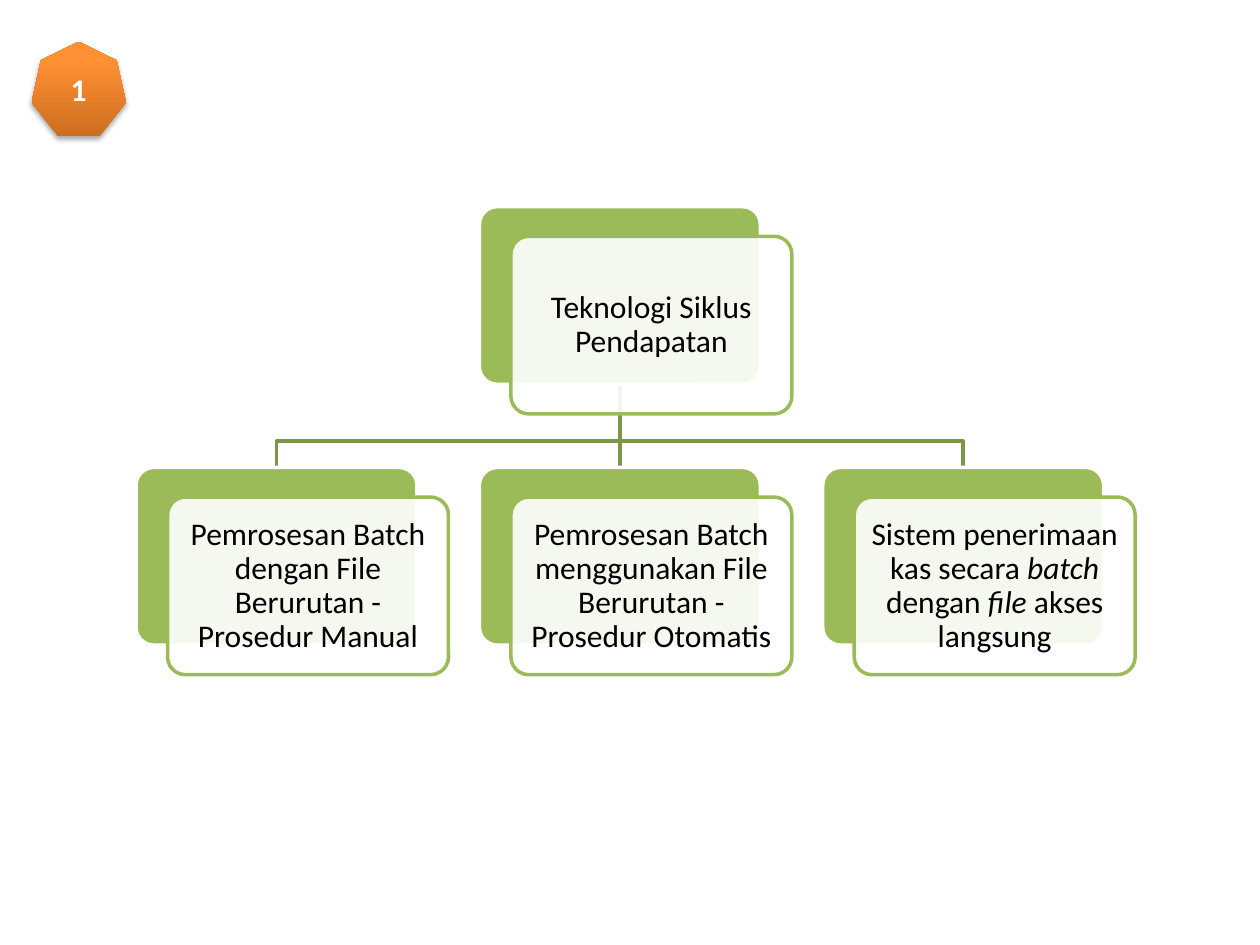
from dataclasses import dataclass
from lxml import etree
from copy import deepcopy
from pptx import Presentation, util as u
from pptx.dml.color import RGBColor
from pptx.enum import shapes, text
from pptx.oxml.ns import qn

# Content: each label is a list of (words, italic) runs
NUM = [("1", False)]
ROOT = [("Teknologi Siklus Pendapatan", False)]
KIDS = [
    [("Pemrosesan Batch dengan File Berurutan - Prosedur Manual", False)],
    [("Pemrosesan Batch menggunakan File Berurutan - Prosedur Otomatis", False)],
    [("Sistem penerimaan kas secara ", False), ("batch ", True),
     ("dengan ", False), ("file ", True), ("akses langsung", False)],
]


@dataclass(frozen=True)
class Theme:
    font: str = "Calibri"
    size: int = 18
    line: int = 2
    green: str = "9BBB59"
    dark: str = "7C9647"
    white: str = "FFFFFF"
    black: str = "000000"
    glow: tuple = ((0, "CC6E20"), (0.8, "FF9034"), (1, "FF9136"))


T = Theme()

# Grid, in inches
WIDE, HIGH = 10, 7.5
BOX_W, BOX_H = 2.23, 1.41
LEFT, STEP = 1.08, (6.53 - 1.08) / (len(KIDS) - 1)
TOP, ROW = 1.64, 2.07
OFF_X, OFF_Y = 0.25, 0.235
BEND = 0.21
PAD = 0.07

deck = Presentation()
deck.slide_width, deck.slide_height = u.Inches(WIDE), u.Inches(HIGH)
slide = deck.slides.add_slide(deck.slide_layouts[6])


def rgb(code):
    return RGBColor.from_string(code)


def write(shape, runs, color=T.black, bold=False, pad=PAD, lead=0.9):
    frame = shape.text_frame
    frame.word_wrap = True
    frame.vertical_anchor = text.MSO_ANCHOR.MIDDLE
    frame.margin_left = frame.margin_right = u.Inches(pad)
    frame.margin_top = frame.margin_bottom = u.Inches(pad)
    para = frame.paragraphs[0]
    para.alignment, para.line_spacing = text.PP_ALIGN.CENTER, lead
    for words, slant in runs:
        run = para.add_run()
        run.text = words
        font = run.font
        font.name, font.size = T.font, u.Pt(T.size)
        font.bold, font.italic = bold, slant
        font.color.rgb = rgb(color)


def panel(x, y, fill, line):
    box = slide.shapes.add_shape(
        shapes.MSO_SHAPE.ROUNDED_RECTANGLE,
        *map(u.Inches, (x, y, BOX_W, BOX_H)))
    box.adjustments[0] = 0.1
    box.shadow.inherit = False
    box.fill.solid()
    box.fill.fore_color.rgb = rgb(fill)
    box.line.color.rgb, box.line.width = rgb(line), u.Pt(T.line)
    return box


def card(x, y, runs):
    panel(x, y, T.green, T.white)
    front = panel(x + OFF_X, y + OFF_Y, T.white, T.green)
    tint = front._element.spPr.find(qn("a:solidFill"))[0]
    etree.SubElement(tint, qn("a:alpha"), val="90000")
    write(front, runs)


def branch(start, end):
    (x1, y1), (x2, y2) = start, end
    if abs(x1 - x2) < 0.01:
        link = slide.shapes.add_connector(
            shapes.MSO_CONNECTOR.STRAIGHT, *map(u.Inches, (x1, y1, x1, y2)))
        etree.SubElement(link._element.spPr, qn("a:effectLst"))
    else:
        turn = y2 - BEND
        pts = [(u.Inches(x), u.Inches(y))
               for x, y in (start, (x1, turn), (x2, turn), end)]
        pen = slide.shapes.build_freeform(*pts[0])
        pen.add_line_segments(pts[1:], close=False)
        link = pen.convert_to_shape()
        link.fill.background()
        link.shadow.inherit = False
    link.line.color.rgb, link.line.width = rgb(T.dark), u.Pt(T.line)


def badge(x, y, size):
    mark = slide.shapes.add_shape(
        shapes.MSO_SHAPE.HEPTAGON, *map(u.Inches, (x, y, size, size)))
    mark.line.fill.background()
    mark.fill.gradient()
    mark.fill.gradient_angle = 90
    props = mark._element.spPr
    stops = props.find(".//" + qn("a:gsLst"))
    stops.append(deepcopy(stops[0]))
    for stop, (place, color) in zip(mark.fill.gradient_stops, T.glow):
        stop.position, stop.color.rgb = place, rgb(color)
    # Soft shadow below
    mark.shadow.inherit = False
    cast = etree.SubElement(
        props.find(qn("a:effectLst")), qn("a:outerShdw"), blurRad="40000",
        dist="23000", dir="5400000", rotWithShape="0")
    shade = etree.SubElement(cast, qn("a:srgbClr"), val=T.black)
    etree.SubElement(shade, qn("a:alpha"), val="35000")
    write(mark, NUM, color=T.white, bold=True, pad=0.05, lead=1)


# Branches lie behind the cards
cols = [LEFT + i * STEP for i in range(len(KIDS))]
mid, low = cols[len(cols) // 2], TOP + ROW
for x in reversed(cols):
    branch((mid + BOX_W / 2, TOP + BOX_H), (x + BOX_W / 2, low))

# Cards
card(mid, TOP, ROOT)
for x, runs in zip(cols, KIDS):
    card(x, low, runs)

# Slide number badge
badge(0.25, 0.33, 0.75)

deck.save("out.pptx")
